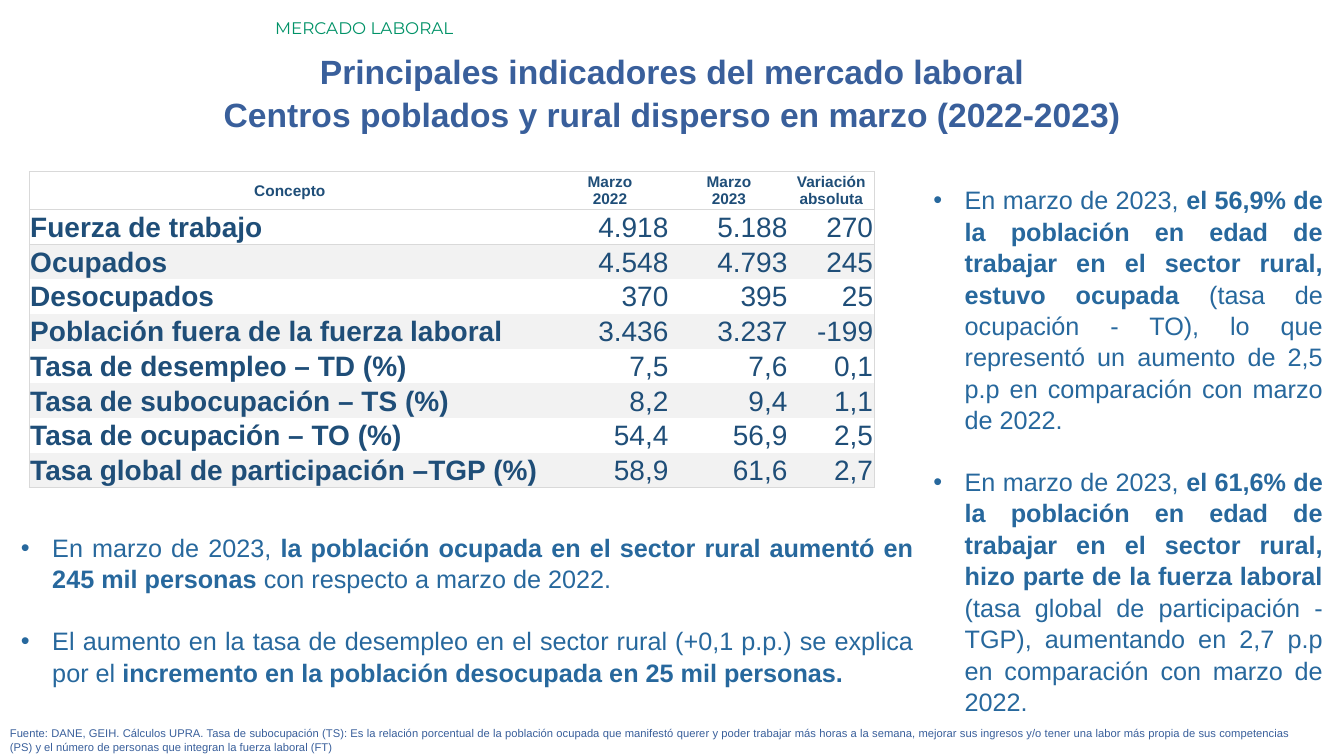
from dataclasses import dataclass

from lxml.etree import SubElement
from pptx import Presentation
from pptx.dml.color import RGBColor
from pptx.enum.text import MSO_ANCHOR as Anchor, MSO_AUTO_SIZE as AutoSize, PP_ALIGN as Align
from pptx.oxml.ns import qn
from pptx.util import Inches, Pt


@dataclass(frozen=True)
class Theme:
    font: str = "Arial"
    section_font: str = "Montserrat"
    section: str = "009267"
    heading: str = "395F9B"
    body: str = "27689D"
    table: str = "1F4E78"
    border: str = "D9D9D9"
    band: str = "F2F2F2"
    white: str = "FFFFFF"
    section_size: float = 12
    title_size: float = 24
    body_size: float = 18
    header_size: float = 11
    cell_size: float = 20
    source_size: float = 8


THEME = Theme()

TITLE = [
    "Principales indicadores del mercado laboral",
    "Centros poblados y rural disperso en marzo (2022-2023)",
]
SOURCE = (
    "Fuente: DANE, GEIH. Cálculos UPRA. Tasa de subocupación (TS): Es la relación porcentual "
    "de la población ocupada que manifestó querer y poder trabajar más horas a la semana, "
    "mejorar sus ingresos y/o tener una labor más propia de sus competencias (PS) y el número "
    "de personas que integran la fuerza laboral (FT)"
)
INDICATORS = [
    ("Concepto", "Marzo\n2022", "Marzo\n2023", "Variación absoluta"),
    ("Fuerza de trabajo", "4.918", "5.188", "270"),
    ("Ocupados", "4.548", "4.793", "245"),
    ("Desocupados", "370", "395", "25"),
    ("Población fuera de la fuerza laboral", "3.436", "3.237", "-199"),
    ("Tasa de desempleo – TD (%)", "7,5", "7,6", "0,1"),
    ("Tasa de subocupación – TS (%)", "8,2", "9,4", "1,1"),
    ("Tasa de ocupación – TO (%)", "54,4", "56,9", "2,5"),
    ("Tasa global de participación –TGP (%)", "58,9", "61,6", "2,7"),
]
COLUMN_WIDTHS = [5.17, 1.18, 1.18, 0.85]
HEADER_HEIGHT = 0.38

CHANGES = [
    [
        ("En marzo de 2023, ", False),
        ("la población ocupada en el sector rural aumentó en 245 mil personas ", True),
        ("con respecto a marzo de 2022.", False),
    ],
    [
        ("El aumento en la tasa de desempleo en el sector rural (+0,1 p.p.) se explica por el ", False),
        ("incremento en la población desocupada en 25 mil personas.", True),
    ],
]
RATES = [
    [
        ("En marzo de 2023, ", False),
        ("el 56,9% de la población en edad de trabajar en el sector rural, estuvo ocupada ", True),
        ("(tasa de ocupación - TO), lo que representó un aumento de 2,5 p.p en comparación "
         "con marzo de 2022.", False),
    ],
    [
        ("En marzo de 2023, ", False),
        ("el 61,6% de la población en edad de trabajar en el sector rural, hizo parte de la "
         "fuerza laboral ", True),
        ("(tasa global de participación - TGP), aumentando en 2,7 p.p en comparación "
         "con marzo de 2022.", False),
    ],
]


def add_run(paragraph, text, size, color, bold=False, font=THEME.font):
    run = paragraph.add_run()
    run.text = text
    run.font.name = font
    run.font.size = Pt(size)
    run.font.bold = bold
    run.font.color.rgb = RGBColor.from_string(color)


def paragraphs(frame, count):
    return [frame.paragraphs[0]] + [frame.add_paragraph() for _ in range(count - 1)]


def add_frame(slide, box):
    frame = slide.shapes.add_textbox(*map(Inches, box)).text_frame
    frame.word_wrap = True
    return frame


def add_section(slide, box):
    paragraph = add_frame(slide, box).paragraphs[0]
    add_run(paragraph, "MERCADO LABORAL", THEME.section_size, THEME.section, font=THEME.section_font)


def place_title(slide, box):
    title = slide.shapes.title
    title.left, title.top, title.width, title.height = map(Inches, box)
    frame = title.text_frame
    frame.word_wrap = True
    frame.auto_size = AutoSize.NONE
    frame.vertical_anchor = Anchor.TOP
    for paragraph, line in zip(paragraphs(frame, len(TITLE)), TITLE):
        paragraph.alignment = Align.CENTER
        paragraph.line_spacing = 1.06
        paragraph.space_before = Pt(0)
        add_run(paragraph, line, THEME.title_size, THEME.heading, True)


def add_source(slide, box):
    paragraph = add_frame(slide, box).paragraphs[0]
    paragraph.alignment = Align.JUSTIFY
    add_run(paragraph, SOURCE, THEME.source_size, THEME.heading)


def add_bullets(slide, box, items):
    frame = add_frame(slide, box)
    for index, (paragraph, runs) in enumerate(zip(paragraphs(frame, len(items)), items)):
        paragraph.alignment = Align.JUSTIFY
        paragraph.line_spacing = 1.04
        if index:
            paragraph.space_before = Pt(21.6)
        properties = paragraph._p.get_or_add_pPr()
        properties.set("marL", str(Inches(0.31)))
        properties.set("indent", str(-Inches(0.31)))
        SubElement(properties, qn("a:buFont"), typeface=THEME.font)
        SubElement(properties, qn("a:buChar"), char="•")
        for text, bold in runs:
            add_run(paragraph, text, THEME.body_size, THEME.body, bold)


def set_borders(cell, visible):
    properties = cell._tc.get_or_add_tcPr()
    for side in "LRTB":
        line = SubElement(properties, qn(f"a:ln{side}"), w=str(Pt(0.5)))
        if side in visible:
            fill = SubElement(line, qn("a:solidFill"))
            SubElement(fill, qn("a:srgbClr"), val=THEME.border)
        else:
            SubElement(line, qn("a:noFill"))


def fill_cell(cell, text, row, column):
    header = row == 0
    cell.vertical_anchor = Anchor.MIDDLE
    cell.margin_left = cell.margin_right = cell.margin_top = Inches(0.01)
    cell.margin_bottom = 0
    edges = {
        "L": column == 0,
        "R": column == len(COLUMN_WIDTHS) - 1,
        "T": row <= 2,
        "B": row <= 1 or row == len(INDICATORS) - 1,
    }
    set_borders(cell, [side for side, shown in edges.items() if shown])
    banded = row > 0 and row % 2 == 0
    cell.fill.solid()
    cell.fill.fore_color.rgb = RGBColor.from_string(THEME.band if banded else THEME.white)
    lines = text.split("\n")
    for paragraph, line in zip(paragraphs(cell.text_frame, len(lines)), lines):
        paragraph.alignment = Align.CENTER if header else Align.RIGHT if column else Align.LEFT
        size = THEME.header_size if header else THEME.cell_size
        add_run(paragraph, line, size, THEME.table, header or column == 0)


def add_indicators(slide, box):
    frame = slide.shapes.add_table(len(INDICATORS), len(COLUMN_WIDTHS), *map(Inches, box))
    table = frame.table
    for column, width in zip(table.columns, COLUMN_WIDTHS):
        column.width = Inches(width)
    row_height = (box[3] - HEADER_HEIGHT) / (len(INDICATORS) - 1)
    for r, record in enumerate(INDICATORS):
        table.rows[r].height = Inches(row_height if r else HEADER_HEIGHT)
        for c, text in enumerate(record):
            fill_cell(table.cell(r, c), text, r, c)


def main():
    deck = Presentation()
    deck.slide_width, deck.slide_height = Inches(13.33), Inches(7.5)
    slide = deck.slides.add_slide(deck.slide_layouts[5])
    add_section(slide, (2.63, 0.13, 10.7, 0.3))
    place_title(slide, (0, 0.43, 13.33, 0.91))
    add_source(slide, (0, 7.16, 12.91, 0.37))
    add_bullets(slide, (0.11, 5.22, 9.05, 1.62), CHANGES)
    add_indicators(slide, (0.29, 1.7, 8.38, 3.14))
    add_bullets(slide, (9.16, 1.77, 4.06, 5.25), RATES)
    deck.save("out.pptx")


if __name__ == "__main__":
    main()
